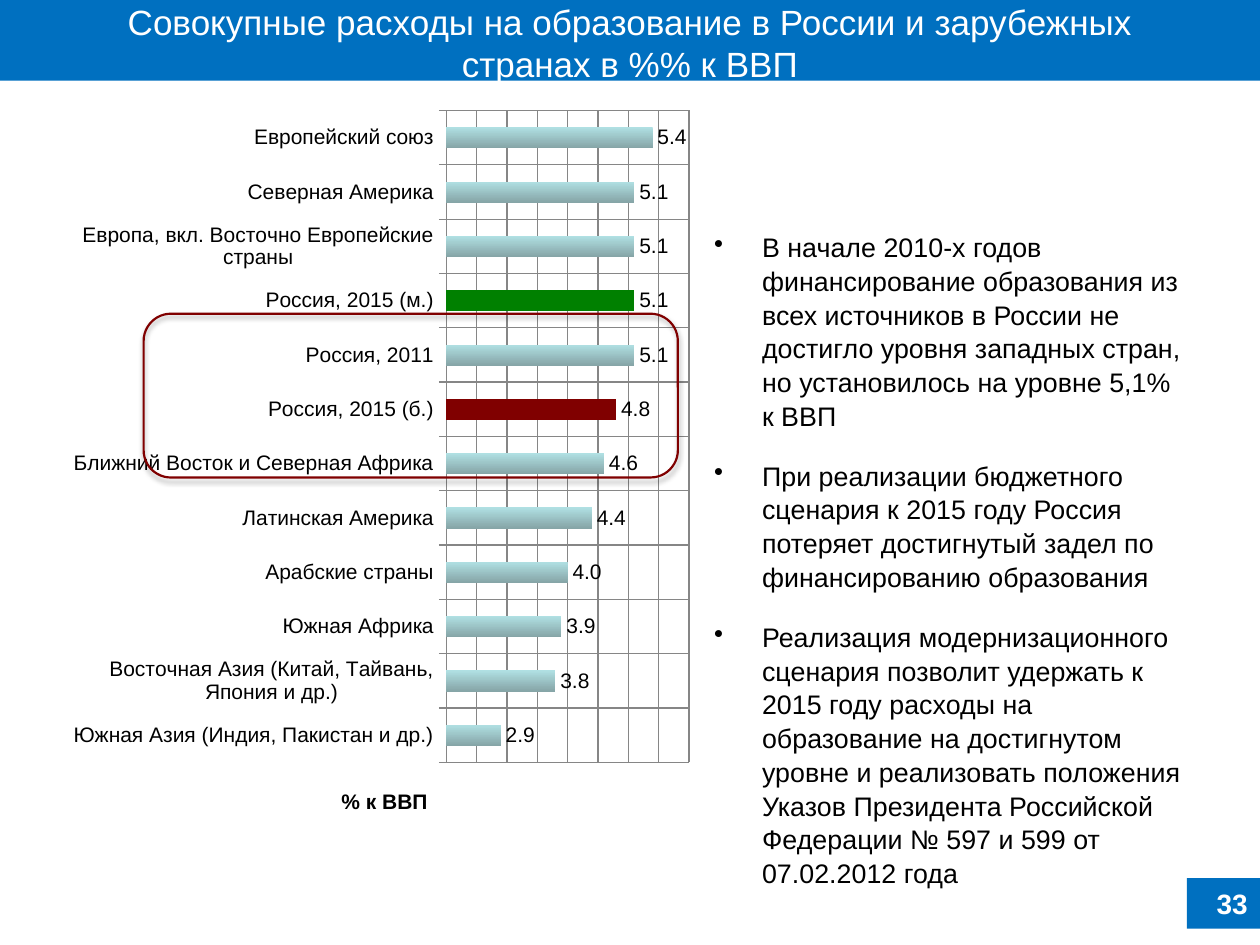
from lxml import etree
from pptx import Presentation
from pptx.chart.data import CategoryChartData
from pptx.dml.color import RGBColor
from pptx.enum.chart import XL_CHART_TYPE, XL_LABEL_POSITION, XL_TICK_MARK
from pptx.enum.shapes import MSO_SHAPE
from pptx.enum.text import MSO_ANCHOR, PP_ALIGN
from pptx.oxml import parse_xml
from pptx.oxml.ns import nsdecls, qn
from pptx.util import Inches, Pt

BAR = XL_CHART_TYPE.BAR_CLUSTERED
OUTSIDE = XL_LABEL_POSITION.OUTSIDE_END
CROSS = XL_TICK_MARK.CROSS
RECT, ROUND_RECT = MSO_SHAPE.RECTANGLE, MSO_SHAPE.ROUNDED_RECTANGLE
TOP, MIDDLE = MSO_ANCHOR.TOP, MSO_ANCHOR.MIDDLE
LEFT, CENTER, RIGHT = PP_ALIGN.LEFT, PP_ALIGN.CENTER, PP_ALIGN.RIGHT

FONT = "Arial"
COLORS = {
    "blue": "0070C0", "white": "FFFFFF", "black": "000000", "grid": "868686",
    "bar_top": "B0E0E3", "bar_bottom": "86A5A7",
    "green": "008000", "maroon": "800000",
}

SPENDING = [
    ("Европейский союз", 5.4),
    ("Северная Америка", 5.1),
    ("Европа, вкл. Восточно Европейские страны", 5.1),
    ("Россия, 2015 (м.)", 5.1),
    ("Россия, 2011", 5.1),
    ("Россия, 2015 (б.)", 4.8),
    ("Ближний Восток и Северная Африка", 4.6),
    ("Латинская Америка", 4.4),
    ("Арабские страны", 4.0),
    ("Южная Африка", 3.9),
    ("Восточная Азия (Китай, Тайвань, Япония и др.)", 3.8),
    ("Южная Азия (Индия, Пакистан и др.)", 2.9),
]
HIGHLIGHTS = {3: "green", 5: "maroon"}

CONCLUSIONS = [
    "В начале 2010-х годов финансирование образования из всех источников в России "
    "не достигло уровня западных стран, но установилось на уровне 5,1% к ВВП",
    "При реализации бюджетного сценария к 2015 году Россия потеряет достигнутый "
    "задел по финансированию образования",
    "Реализация модернизационного сценария позволит удержать к 2015 году расходы "
    "на образование на достигнутом уровне и реализовать положения Указов Президента "
    "Российской Федерации № 597 и 599 от 07.02.2012 года",
]


def rgb(name):
    return RGBColor.from_string(COLORS[name])


def set_font(font, size, color="black", bold=False):
    font.name, font.size, font.bold = FONT, Pt(size), bold
    font.color.rgb = rgb(color)


def write(sp, *texts, size, color="black", bold=False, align=LEFT, anchor=TOP,
          bullet=False, gap=0, line_spacing=None):
    """Fill a shape with one paragraph per text."""
    tf = sp.text_frame
    tf.word_wrap = True
    tf.vertical_anchor = anchor
    for i, text in enumerate(texts):
        p = tf.add_paragraph() if i else tf.paragraphs[0]
        if bullet:
            pPr = p._p.get_or_add_pPr()
            pPr.set("marL", str(Inches(0.38)))
            pPr.set("indent", str(-Inches(0.38)))
            etree.SubElement(pPr, qn("a:buChar")).set("char", "•")
        p.alignment = align
        p.line_spacing = line_spacing
        p.space_before = Pt(gap if i else 0)
        r = p.add_run()
        r.text = text
        set_font(r.font, size, color, bold)


def add_text(slide, box, *texts, **fmt):
    sp = slide.shapes.add_textbox(*map(Inches, box))
    write(sp, *texts, **fmt)


def add_box(slide, box, shape=RECT, fill=None, line=None):
    sp = slide.shapes.add_shape(shape, *map(Inches, box))
    sp.shadow.inherit = False
    if fill:
        sp.fill.solid()
        sp.fill.fore_color.rgb = rgb(fill)
    else:
        sp.fill.background()
    if line:
        sp.line.color.rgb = rgb(line)
        sp.line.width = Pt(1.25)
    else:
        sp.line.fill.background()
    return sp


def add_shadow(sp):
    effects = sp._element.spPr.find(qn("a:effectLst"))
    effects.append(parse_xml(
        f'<a:outerShdw {nsdecls("a")} blurRad="{Pt(3.1)}" dist="{Pt(1.8)}" '
        f'dir="5400000" rotWithShape="0"><a:srgbClr val="{COLORS["black"]}">'
        '<a:alpha val="35000"/></a:srgbClr></a:outerShdw>'))


def set_layout(parent, before, **place):
    """Place a chart part by fractions of the chart area."""
    old = parent.find(qn("c:layout"))
    if old is not None:
        parent.remove(old)
    modes = {"xMode": "edge", "yMode": "edge"}
    if "w" in place:
        modes = {"layoutTarget": "inner", **modes}
    values = "".join(f'<c:{k} val="{v}"/>' for k, v in {**modes, **place}.items())
    parent.find(qn(before)).addprevious(parse_xml(
        f'<c:layout {nsdecls("c")}><c:manualLayout>{values}'
        '</c:manualLayout></c:layout>'))


def style_axes(chart):
    cat, val = chart.category_axis, chart.value_axis
    cat.reverse_order = True
    cat.major_tick_mark = CROSS
    val.visible = False
    val.minimum_scale, val.maximum_scale, val.major_unit = 2, 6, 0.5
    for axis in (cat, val):
        axis.has_major_gridlines = True
        for line in (axis.format.line, axis.major_gridlines.format.line):
            line.color.rgb = rgb("grid")
            line.width = Pt(0.75)


def add_spending_chart(slide, box):
    data = CategoryChartData(number_format="0.0")
    data.categories = [name for name, _ in SPENDING]
    data.add_series("Series 1", [value for _, value in SPENDING])
    chart = slide.shapes.add_chart(BAR, *map(Inches, box), data).chart
    chart.has_legend = False
    set_font(chart.font, 12)
    style_axes(chart)

    # Bars
    plot = chart.plots[0]
    plot.vary_by_categories = False
    plot.gap_width = 160
    series = plot.series[0]
    fill = series.format.fill
    fill.gradient()
    fill.gradient_angle = 270
    for stop, name in zip(fill.gradient_stops, ("bar_top", "bar_bottom")):
        stop.color.rgb = rgb(name)
    for i, name in HIGHLIGHTS.items():
        point = series.points[i].format.fill
        point.solid()
        point.fore_color.rgb = rgb(name)

    # Value labels
    labels = series.data_labels
    labels.show_value = True
    labels.number_format, labels.number_format_is_linked = "0.0", False
    labels.position = OUTSIDE
    set_font(labels.font, 12)

    # Caption under the plot
    p = chart.chart_title.text_frame.paragraphs[0]
    r = p.add_run()
    r.text = "% к ВВП"
    set_font(r.font, 12, bold=True)
    set_layout(chart.chart_title._element, "c:overlay", x=0.43, y=0.93)
    plot_area = chart._chartSpace.chart.plotArea
    set_layout(plot_area, "c:barChart", x=0.6, y=0.02, w=0.38, h=0.88)


def main():
    prs = Presentation()
    prs.slide_width, prs.slide_height = Inches(10), Inches(7.5)
    slide = prs.slides.add_slide(prs.slide_layouts[6])

    # Header band and page number
    add_box(slide, (0, 0, 10, 0.64), fill="blue")
    page = add_box(slide, (9.42, 6.97, 0.58, 0.4), fill="blue")
    write(page, "33", size=16, color="white", bold=True, align=RIGHT, anchor=MIDDLE)
    add_text(slide, (0.5, -0.09, 9, 0.85),
             "Совокупные расходы на образование в России и зарубежных странах в %% к ВВП",
             size=20, color="white", align=CENTER, anchor=MIDDLE)

    # Conclusions
    add_text(slide, (5.57, 1.77, 3.93, 4.35), *CONCLUSIONS,
             size=15.3, bullet=True, gap=15, line_spacing=1.05)

    # Chart with a frame around the Russian figures
    add_spending_chart(slide, (0.5, 0.76, 5.07, 5.88))
    add_shadow(add_box(slide, (1.14, 2.49, 4.24, 1.3), ROUND_RECT, line="maroon"))

    prs.save("out.pptx")


if __name__ == "__main__":
    main()
